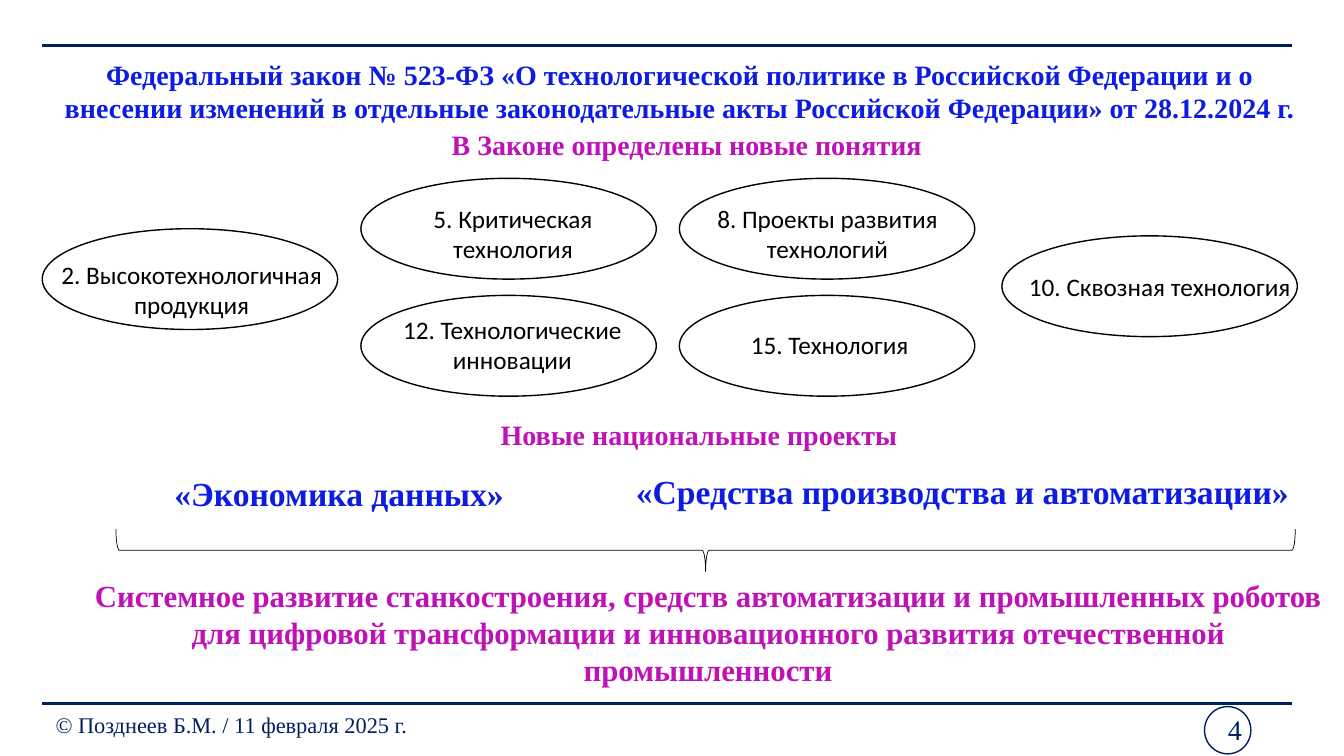
import pptx
import pptx.util
import pptx.dml.color
import pptx.enum.shapes
import pptx.enum.text
import pptx.oxml
import pptx.oxml.ns

Pt = pptx.util.Pt
RGBColor = pptx.dml.color.RGBColor
MSO_SHAPE = pptx.enum.shapes.MSO_SHAPE
ALIGN = pptx.enum.text.PP_ALIGN
ANCHOR = pptx.enum.text.MSO_ANCHOR

NAVY = RGBColor(0x00, 0x20, 0x60)
BLUE = RGBColor(0x0D, 0x1C, 0xE1)
MAGENTA = RGBColor(0xBE, 0x12, 0xB6)
BLACK = RGBColor(0, 0, 0)
WHITE = RGBColor(255, 255, 255)
SERIF, SANS = "Times New Roman", "Calibri"
L, C, R = ALIGN.LEFT, ALIGN.CENTER, ALIGN.RIGHT

# Full-width centred headings: box, size, colour, text
HEADINGS = [
    ((0.7, 37.4, 941.8, 45.4), 20, BLUE,
     "Федеральный закон № 523-ФЗ «О технологической политике в Российской Федерации и о "
     "внесении изменений в отдельные законодательные акты Российской Федерации» от 28.12.2024 г."),
    ((15.1, 87.8, 923, 31.5), 20, MAGENTA, "В Законе определены новые понятия"),
    ((23.8, 294.5, 923, 31.5), 20, MAGENTA, "Новые национальные проекты"),
    ((30.2, 408.2, 923, 87.1), 22, MAGENTA,
     "Системное развитие станкостроения, средств автоматизации и промышленных роботов "
     "для цифровой трансформации и инновационного развития отечественной промышленности"),
]

# Concepts: ellipse corner, label box, lines with their alignment
CONCEPTS = [
    ((30.2, 163.4), (36.7, 181.4, 206.6, 51), [("2. Высокотехнологичная", L), ("продукция", C)]),
    ((257.8, 127.4), (299.5, 141.8, 133.9, 51), [("5. Критическая", C), ("технология", C)]),
    ((485.3, 127.4), (504, 141.8, 174.2, 51), [("8. Проекты развития", C), ("технологий", C)]),
    ((715.7, 168.5), (727.9, 190.1, 203, 29), [("10. Сквозная технология", L)]),
    ((257.8, 211), (280.8, 221, 172.1, 51), [("12. Технологические", L), ("инновации", C)]),
    ((485.3, 211), (529.2, 231.8, 128.2, 29), [("15. Технология", L)]),
]
ELLIPSE_SIZE = (211, 72)

PROJECTS = [
    ((117.4, 334.1, 252.7, 36), "«Экономика данных»"),
    ((447.1, 332.6, 491.8, 36), "«Средства производства и автоматизации»"),
]
FOOTER = [
    ((678.2, 506.2, 216, 28.8), 20, R, "4"),
    ((0, 503.3, 330.5, 28.8), 16, C, "© Позднеев Б.М. / 11 февраля 2025 г."),
]
RULE_X, RULE_YS = (30.2, 923), (32.4, 502.6)

prs = pptx.Presentation()
prs.slide_width, prs.slide_height = Pt(960), Pt(540)
s = prs.slides.add_slide(prs.slide_layouts[6])


def add_outline(kind, box, color, weight, fill=None):
    sp = s.shapes.add_shape(kind, *map(Pt, box))
    sp.shadow.inherit = False
    if fill is None:
        sp.fill.background()
    else:
        sp.fill.solid()
        sp.fill.fore_color.rgb = fill
    sp.line.color.rgb = color
    sp.line.width = Pt(weight)
    return sp


def add_text(box, lines, size, color, font=SERIF, bold=False, wrap=True):
    """Add a text box; lines is a list of (text, alignment)."""
    tf = s.shapes.add_textbox(*map(Pt, box)).text_frame
    tf.word_wrap = wrap
    for i, (text, align) in enumerate(lines):
        p = tf.add_paragraph() if i else tf.paragraphs[0]
        p.text = text
        p.alignment = align
        for r in p.runs:
            r.font.name, r.font.size, r.font.bold = font, Pt(size), bold
            r.font.color.rgb = color
    return tf


add_outline(MSO_SHAPE.OVAL, (860.4, 504.7, 33.1, 33.8), NAVY, 1, WHITE)
for y in RULE_YS:
    rule = s.shapes.add_connector(pptx.enum.shapes.MSO_CONNECTOR.STRAIGHT,
                                  Pt(RULE_X[0]), Pt(y), Pt(RULE_X[1]), Pt(y))
    rule.line.color.rgb = NAVY
    rule.line.width = Pt(2)
    rule._element.spPr.append(
        pptx.oxml.parse_xml("<a:effectLst %s/>" % pptx.oxml.ns.nsdecls("a")))

for box, size, align, text in FOOTER:
    add_text(box, [(text, align)], size, NAVY).vertical_anchor = ANCHOR.MIDDLE

for box, size, color, text in HEADINGS:
    p = add_text(box, [(text, C)], size, color, bold=True).paragraphs[0]
    p.space_after = Pt(12)
    p._p.get_or_add_pPr().set("marL", str(Pt(28)))

for corner, box, lines in CONCEPTS:
    add_outline(MSO_SHAPE.OVAL, corner + ELLIPSE_SIZE, BLACK, 1)
    add_text(box, lines, 18, BLACK, SANS, wrap=False)

for box, text in PROJECTS:
    add_text(box, [(text, L)], 24, BLUE, bold=True, wrap=False)

brace = add_outline(MSO_SHAPE.RIGHT_BRACE, (488.9, -28.1, 30.2, 842.4), BLACK, 0.5)
brace.rotation = 90

prs.save("out.pptx")
